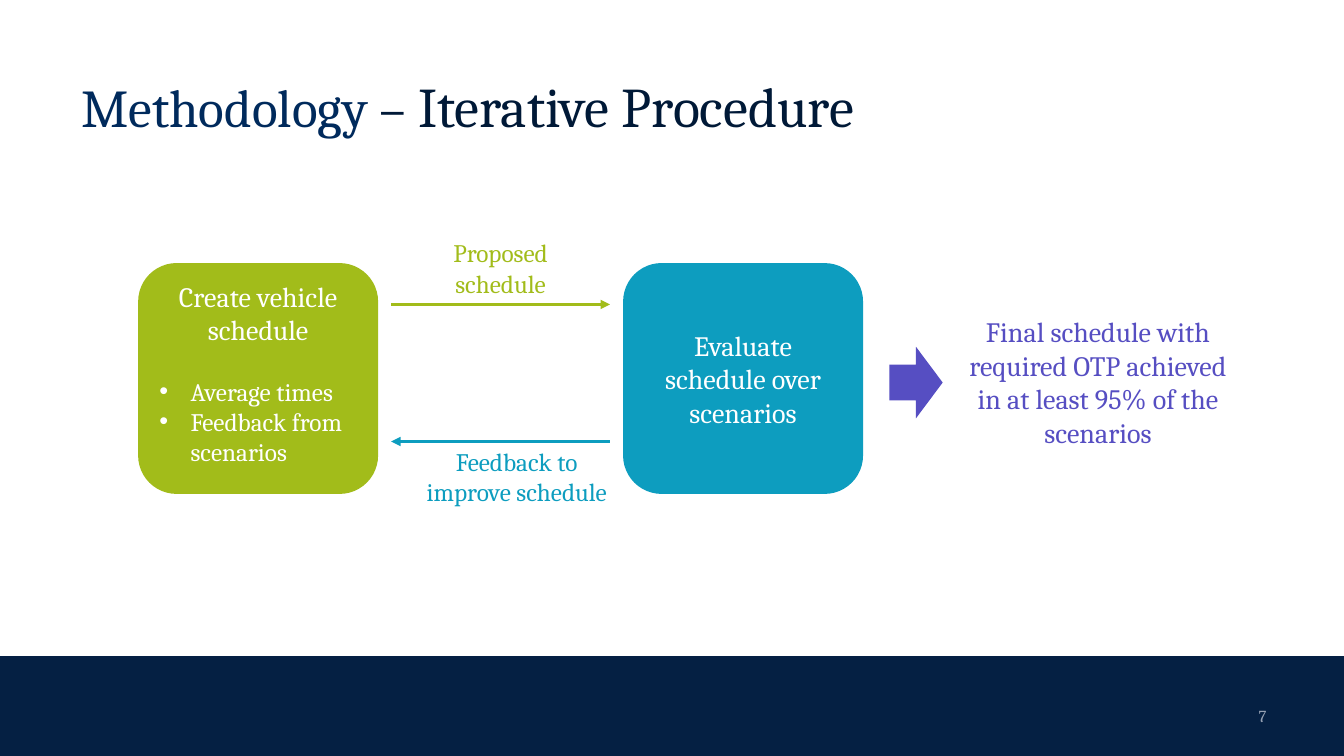
import pptx
import pptx.dml.color
import pptx.enum.shapes
import pptx.enum.text
import pptx.oxml
import pptx.oxml.ns
import pptx.util
from lxml import etree

RGBColor = pptx.dml.color.RGBColor
SHAPE = pptx.enum.shapes.MSO_SHAPE
ALIGN = pptx.enum.text.PP_ALIGN
ANCHOR = pptx.enum.text.MSO_ANCHOR
qn = pptx.oxml.ns.qn

WHITE = RGBColor(0xFF, 0xFF, 0xFF)
NAVY = RGBColor(0x05, 0x20, 0x43)
TITLE_BLUE = RGBColor(0x00, 0x2A, 0x5C)
TITLE_DARK = RGBColor(0x00, 0x19, 0x37)
PAGE_GREY = RGBColor(0x96, 0xA1, 0xB3)
GREEN = RGBColor(0xA2, 0xBC, 0x1A)
TEAL = RGBColor(0x0D, 0x9D, 0xBF)
PURPLE = RGBColor(0x56, 0x4E, 0xC2)

FONT = "Cambria"
SLIDE_W, SLIDE_H = 1333, 750


def px(n):
    return pptx.util.Emu(n * 9144)


def add_run(p, text, size, color):
    r = p.add_run()
    r.text = text
    formats = {"name": FONT, "size": pptx.util.Pt(size)}
    for name, value in formats.items():
        setattr(r.font, name, value)
    r.font.color.rgb = color


def add_text(slide, box, runs, align=ALIGN.CENTER, anchor=ANCHOR.TOP):
    sp = slide.shapes.add_textbox(*map(px, box))
    tf = sp.text_frame
    for name, value in {"word_wrap": True, "vertical_anchor": anchor}.items():
        setattr(tf, name, value)
    p = tf.paragraphs[0]
    p.alignment = align
    for run in runs:
        add_run(p, *run)


def add_block(slide, shape, box, color):
    sp = slide.shapes.add_shape(shape, *map(px, box))
    sp.shadow.inherit = False
    sp.fill.solid()
    sp.fill.fore_color.rgb = color
    sp.line.fill.background()
    return sp


def add_arrow(slide, x1, x2, y, color):
    line = slide.shapes.add_connector(
        pptx.enum.shapes.MSO_CONNECTOR.STRAIGHT, px(x1), px(y), px(x2), px(y))
    line.line.color.rgb = color
    line.line.width = pptx.util.Pt(2.25)
    etree.SubElement(line.line._get_or_add_ln(), qn("a:tailEnd"), type="triangle")
    etree.SubElement(line._element.spPr, qn("a:effectLst"))


def add_bullet(tf, text, size, color):
    p = tf.add_paragraph()
    p.alignment = ALIGN.LEFT
    pPr = p._p.get_or_add_pPr()
    indent = px(31)
    pPr.set("marL", str(indent))
    pPr.set("indent", str(-indent))
    etree.SubElement(pPr, qn("a:buFont"), typeface="Arial")
    etree.SubElement(pPr, qn("a:buChar"), char="•")
    add_run(p, text, size, color)
    return p


def step(slide, box, color, heading, bullets=()):
    sp = add_block(slide, SHAPE.ROUNDED_RECTANGLE, box, color)
    tf = sp.text_frame
    tf.word_wrap = True
    tf.vertical_anchor = ANCHOR.TOP if bullets else ANCHOR.MIDDLE
    p = tf.paragraphs[0]
    p.alignment = ALIGN.CENTER
    add_run(p, heading, 20, WHITE)
    for i, text in enumerate(bullets):
        p = add_bullet(tf, text, 18, WHITE)
        if i == 0:
            p.space_before = pptx.util.Pt(21)


def title(slide, box):
    add_text(slide, box, [("Methodology ", 38, TITLE_BLUE),
                          ("– ", 38, TITLE_DARK),
                          ("Iterative Procedure", 40, TITLE_DARK)],
             ALIGN.LEFT, ANCHOR.MIDDLE)


def footer(slide, box):
    x, y, w, h = box
    add_block(slide, SHAPE.RECTANGLE, box, NAVY)
    add_text(slide, (x + w - 168, y + 39, 101, 40), [("7", 12, PAGE_GREY)],
             ALIGN.RIGHT, ANCHOR.MIDDLE)


def iteration_loop(slide, box):
    x, y, w, h = box
    step_w, gap = 238, 13
    right = x + w - step_w
    step(slide, (x, y, step_w, h), GREEN, "Create vehicle schedule",
         ["Average times", "Feedback from scenarios"])
    step(slide, (right, y, step_w, h), TEAL, "Evaluate schedule over scenarios")

    # Arrows between the two steps, with their labels
    start, end = x + step_w + gap, right - gap
    out_y, back_y = y + 41, y + 177
    add_arrow(slide, start, end, out_y, GREEN)
    add_text(slide, (start + 5, out_y - 71, 207, 71),
             [("Proposed schedule", 18, GREEN)])
    add_arrow(slide, end, start, back_y, TEAL)
    add_text(slide, (right - 211, back_y, 211, 71),
             [("Feedback to improve schedule", 18, TEAL)])


def result(slide, box):
    x, y, w, h = box
    add_block(slide, SHAPE.RIGHT_ARROW, (x, y + 37, 53, 71), PURPLE)
    add_text(slide, (x + 68, y, w - 68, h),
             [("Final schedule with required OTP achieved "
               "in at least 95% of the scenarios", 20, PURPLE)])


def main():
    prs = pptx.Presentation()
    prs.slide_width, prs.slide_height = px(SLIDE_W), px(SLIDE_H)
    slide = prs.slides.add_slide(prs.slide_layouts[6])
    footer(slide, (0, 651, SLIDE_W, 99))
    title(slide, (71, 50, 1113, 109))
    iteration_loop(slide, (137, 261, 719, 229))
    result(slide, (882, 307, 346, 145))
    prs.save("out.pptx")


if __name__ == "__main__":
    main()
